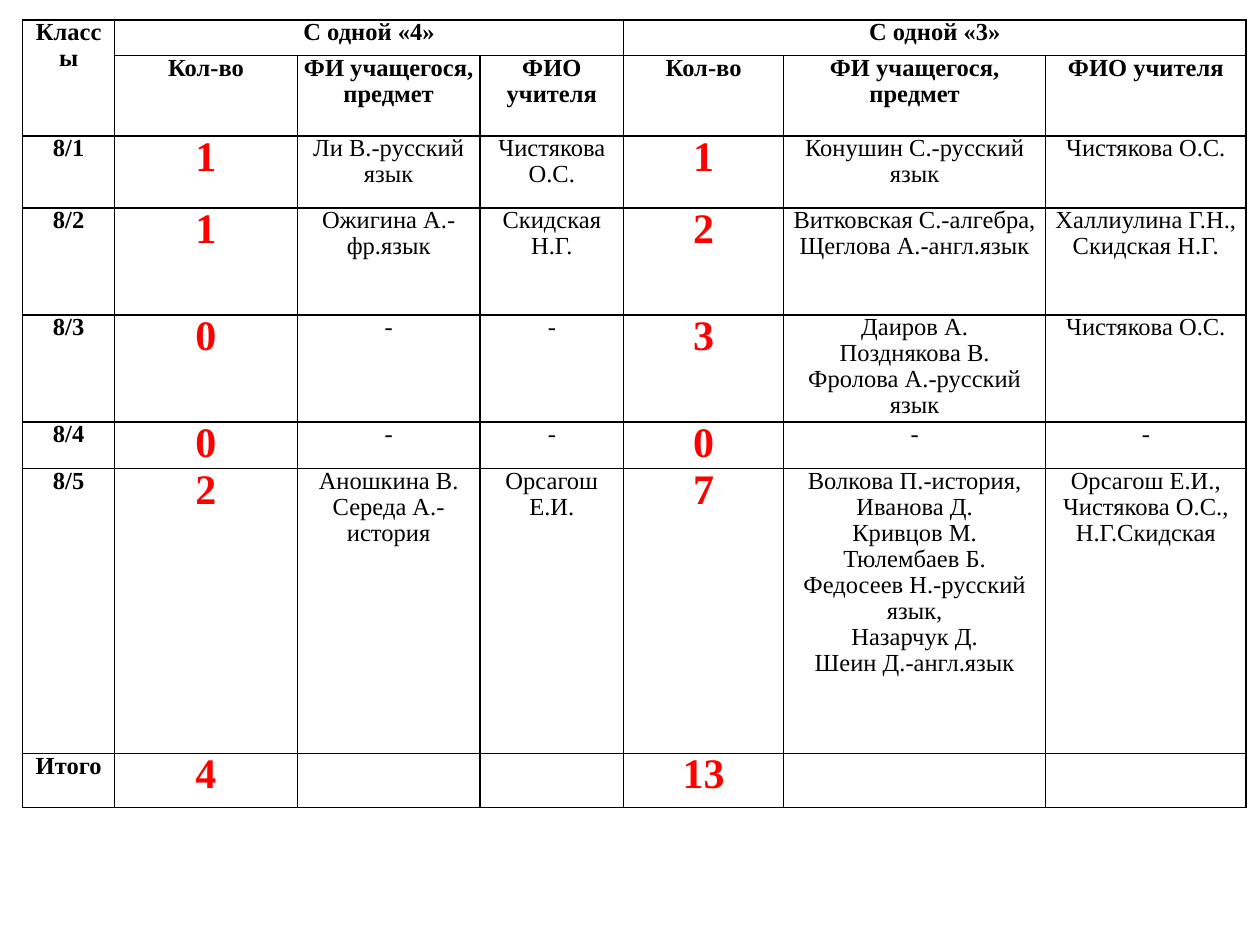
"""Build a slide with a table of pupils who have a single «4» or «3»."""
from lxml import etree
from pptx import Presentation
from pptx import util as u
from pptx.dml.color import RGBColor
from pptx.enum import text
from pptx.oxml import ns

BLACK = RGBColor(0x00, 0x00, 0x00)
RED = RGBColor(0xFF, 0x00, 0x00)
WHITE = RGBColor(0xFF, 0xFF, 0xFF)
FONT = "Times New Roman"

GROUP_HEADINGS = ["Кол-во", "ФИ учащегося, предмет", "ФИО учителя"]
HEADER_ROWS = [
    ["Классы", "С одной «4»", "", "", "С одной «3»", "", ""],
    [""] + GROUP_HEADINGS * 2,
]
CLASS_ROWS = [
    ["8/1", "1", "Ли В.-русский язык", "Чистякова О.С.",
     "1", "Конушин С.-русский язык", "Чистякова О.С."],
    ["8/2", "1", "Ожигина А.-фр.язык", "Скидская Н.Г.",
     "2", "Витковская С.-алгебра,\nЩеглова А.-англ.язык", "Халлиулина Г.Н.,\nСкидская Н.Г."],
    ["8/3", "0", "-", "-",
     "3", "Даиров А.\nПозднякова В.\nФролова А.-русский язык", "Чистякова О.С."],
    ["8/4", "0", "-", "-", "0", "-", "-"],
    ["8/5", "2", "Аношкина В.\nСереда А.-история", "Орсагош Е.И.",
     "7", "Волкова П.-история,\nИванова Д.\nКривцов М.\nТюлембаев Б.\n"
          "Федосеев Н.-русский язык,\nНазарчук Д.\nШеин Д.-англ.язык",
     "Орсагош Е.И., Чистякова О.С.,\nН.Г.Скидская"],
    ["Итого", "4", "", "", "13", "", ""],
]
ROWS = HEADER_ROWS + CLASS_ROWS
COLUMN_WIDTHS = [0.73, 1.45, 1.45, 1.14, 1.27, 2.08, 1.59]
ROW_HEIGHTS = [0.28, 0.64, 0.57, 0.85, 0.85, 0.37, 2.26, 0.43]
COUNT_COLUMNS = (1, 4)
MERGES = [((0, 0), (1, 0)), ((0, 1), (0, 3)), ((0, 4), (0, 6))]


def add_borders(cell):
    properties = cell._tc.get_or_add_tcPr()
    for position, side in enumerate(("lnL", "lnR", "lnT", "lnB")):
        line = etree.Element(ns.qn(f"a:{side}"), w=str(u.Pt(1)))
        fill = etree.SubElement(line, ns.qn("a:solidFill"))
        etree.SubElement(fill, ns.qn("a:srgbClr"), val=str(BLACK))
        properties.insert(position, line)


def format_cell(cell, content, size, color, bold):
    cell.fill.solid()
    cell.fill.fore_color.rgb = WHITE
    cell.margin_left = cell.margin_right = u.Inches(0.05)
    cell.margin_top = cell.margin_bottom = 0
    add_borders(cell)
    if not content:
        return
    cell.text = content
    for paragraph in cell.text_frame.paragraphs:
        paragraph.alignment = text.PP_ALIGN.CENTER
        paragraph.line_spacing = 0.96
        font = paragraph.font
        font.name, font.size, font.bold = FONT, u.Pt(size), bold
        font.color.rgb = color


def main():
    presentation = Presentation()
    presentation.slide_width, presentation.slide_height = u.Inches(10), u.Inches(7.5)
    slide = presentation.slides.add_slide(presentation.slide_layouts[6])
    table = slide.shapes.add_table(
        len(ROWS), len(COLUMN_WIDTHS), u.Inches(0.18), u.Inches(0.16),
        u.Inches(sum(COLUMN_WIDTHS)), u.Inches(sum(ROW_HEIGHTS))).table
    table.first_row = table.horz_banding = False
    for column, width in zip(table.columns, COLUMN_WIDTHS):
        column.width = u.Inches(width)
    for row, height in zip(table.rows, ROW_HEIGHTS):
        row.height = u.Inches(height)

    for row_index, contents in enumerate(ROWS):
        is_header = row_index < len(HEADER_ROWS)
        for column_index, content in enumerate(contents):
            is_count = not is_header and column_index in COUNT_COLUMNS
            format_cell(table.cell(row_index, column_index), content,
                        size=24 if is_count else 14,
                        color=RED if is_count else BLACK,
                        bold=is_header or is_count or column_index == 0)
    for first, last in MERGES:
        table.cell(*first).merge(table.cell(*last))
    presentation.save("out.pptx")


if __name__ == "__main__":
    main()
